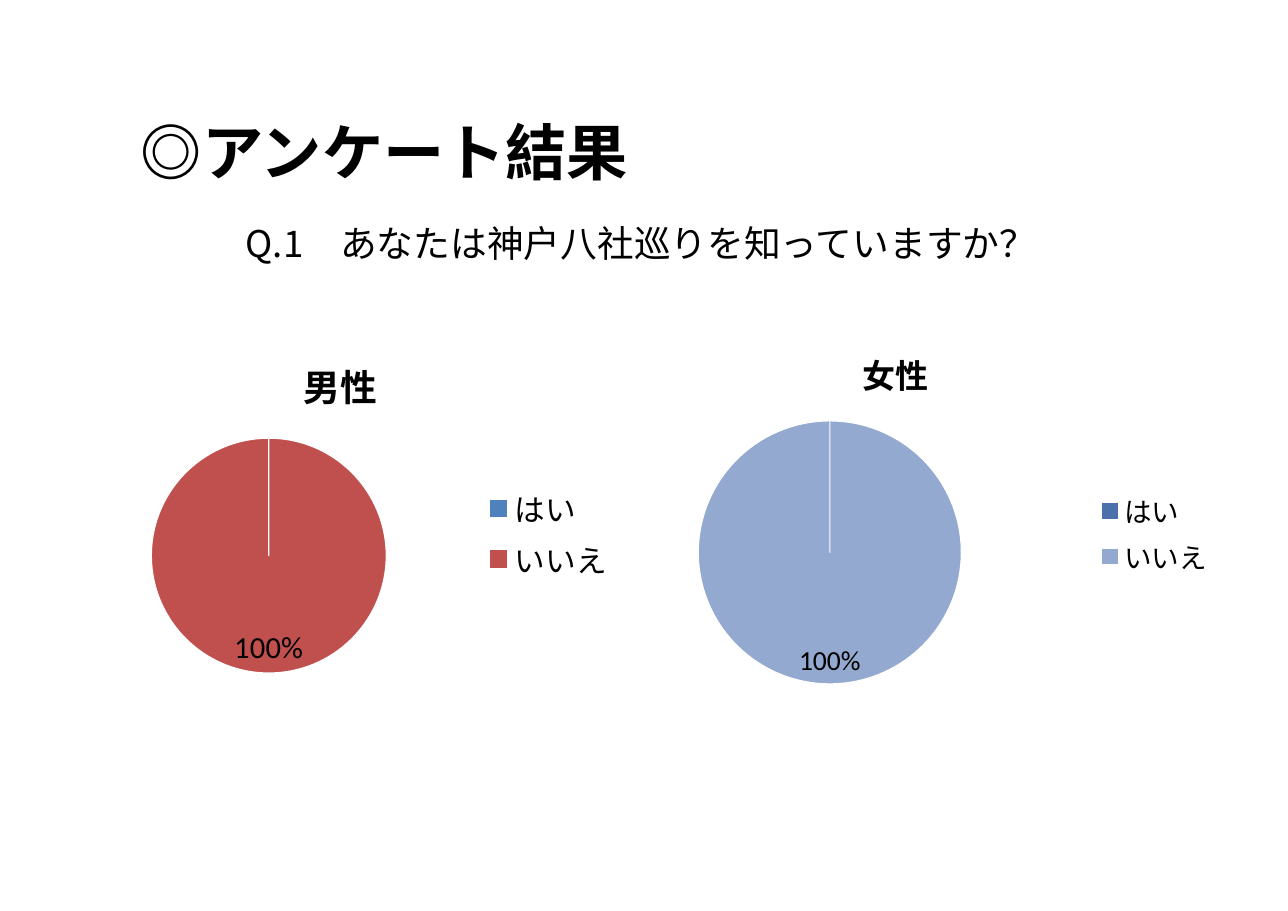
import lxml.etree
import pptx
import pptx.chart.data
import pptx.dml.color
import pptx.enum.chart
import pptx.enum.text
import pptx.oxml
import pptx.oxml.ns
import pptx.util

COLORS = {
    "text": "000000",
    "white": "FFFFFF",
    "male_yes": "4F81BD",
    "male_no": "C0504D",
    "female_yes": "4A71A9",
    "female_no": "94A9CF",
}


class SurveySlide:
    text_font = "Noto Sans CJK JP"
    chart_font = "Calibri"
    answers = ("はい", "いいえ")

    def __init__(self, presentation):
        self.slide = presentation.slides.add_slide(presentation.slide_layouts[6])

    def color(self, name):
        return pptx.dml.color.RGBColor.from_string(COLORS[name])

    def style(self, font, name, size, bold=False):
        font.name = name
        font.size = pptx.util.Pt(size)
        font.bold = bold
        font.color.rgb = self.color("text")

    def set_east_asian(self, run):
        latin = run.font._element.find(pptx.oxml.ns.qn("a:latin"))
        east_asian = lxml.etree.Element(pptx.oxml.ns.qn("a:ea"))
        east_asian.set("typeface", self.text_font)
        latin.addnext(east_asian)

    def text(self, box, wording, size, bold=False):
        frame = self.slide.shapes.add_textbox(*map(pptx.util.Inches, box)).text_frame
        frame.word_wrap = True
        frame.margin_left = frame.margin_right = 0
        frame.margin_top = frame.margin_bottom = 0
        frame.vertical_anchor = pptx.enum.text.MSO_ANCHOR.MIDDLE
        frame.text = wording
        run = frame.paragraphs[0].runs[0]
        self.style(run.font, self.text_font, size, bold)
        self.set_east_asian(run)

    def place_pie(self, chart, area):
        plot_area = chart.plots[0]._element.getparent()
        for automatic in plot_area.findall(pptx.oxml.ns.qn("c:layout")):
            plot_area.remove(automatic)
        x, y, width, height = area
        plot_area.insert(0, pptx.oxml.parse_xml(
            f'<c:layout {pptx.oxml.ns.nsdecls("c")}><c:manualLayout>'
            '<c:layoutTarget val="inner"/><c:xMode val="edge"/><c:yMode val="edge"/>'
            f'<c:x val="{x}"/><c:y val="{y}"/><c:w val="{width}"/><c:h val="{height}"/>'
            '</c:manualLayout></c:layout>'))

    def pie(self, box, area, group, shares, size, palette):
        answers = pptx.chart.data.CategoryChartData()
        answers.categories = self.answers
        answers.add_series(group, shares)
        chart = self.slide.shapes.add_chart(
            pptx.enum.chart.XL_CHART_TYPE.PIE, *map(pptx.util.Inches, box), answers).chart
        self.style(chart.font, self.chart_font, size)
        self.place_pie(chart, area)

        chart.has_title = True
        chart.chart_title.include_in_layout = False
        heading = chart.chart_title.text_frame
        heading.text = group
        self.style(heading.paragraphs[0].runs[0].font, self.chart_font, size * 1.2, True)

        chart.has_legend = True
        chart.legend.position = pptx.enum.chart.XL_LEGEND_POSITION.RIGHT
        chart.legend.include_in_layout = False
        self.style(chart.legend.font, self.chart_font, size)

        plot = chart.plots[0]
        plot.vary_by_categories = True
        plot.has_data_labels = True
        labels = plot.data_labels
        labels.show_percentage = True
        labels.show_value = False
        labels.number_format = "0%;;"
        labels.number_format_is_linked = False
        labels.position = pptx.enum.chart.XL_LABEL_POSITION.INSIDE_END
        self.style(labels.font, self.chart_font, size)

        for index, name in enumerate(palette):
            slice_format = plot.series[0].points[index].format
            slice_format.fill.solid()
            slice_format.fill.fore_color.rgb = self.color(name)
            slice_format.line.color.rgb = self.color("white")
            slice_format.line.width = pptx.util.Pt(0.75)


def main():
    presentation = pptx.Presentation()
    presentation.slide_width = pptx.util.Inches(11.69)
    presentation.slide_height = pptx.util.Inches(8.27)
    survey = SurveySlide(presentation)
    survey.text((1.28, 0.97, 9.76, 0.8), "◎アンケート結果", 40, True)
    survey.text((2.23, 1.95, 8.1, 0.5), "Q.1　あなたは神戸八社巡りを知っていますか？", 24)
    survey.pie((0.49, 3.03, 5.2, 3.63), (0.17, 0.26, 0.41, 0.59),
               "男性", (0, 100), 20, ("male_yes", "male_no"))
    survey.pie((5.14, 2.95, 5.98, 3.79), (0.2, 0.23, 0.4, 0.63),
               "女性", (0, 100), 18, ("female_yes", "female_no"))
    presentation.save("out.pptx")


if __name__ == "__main__":
    main()
